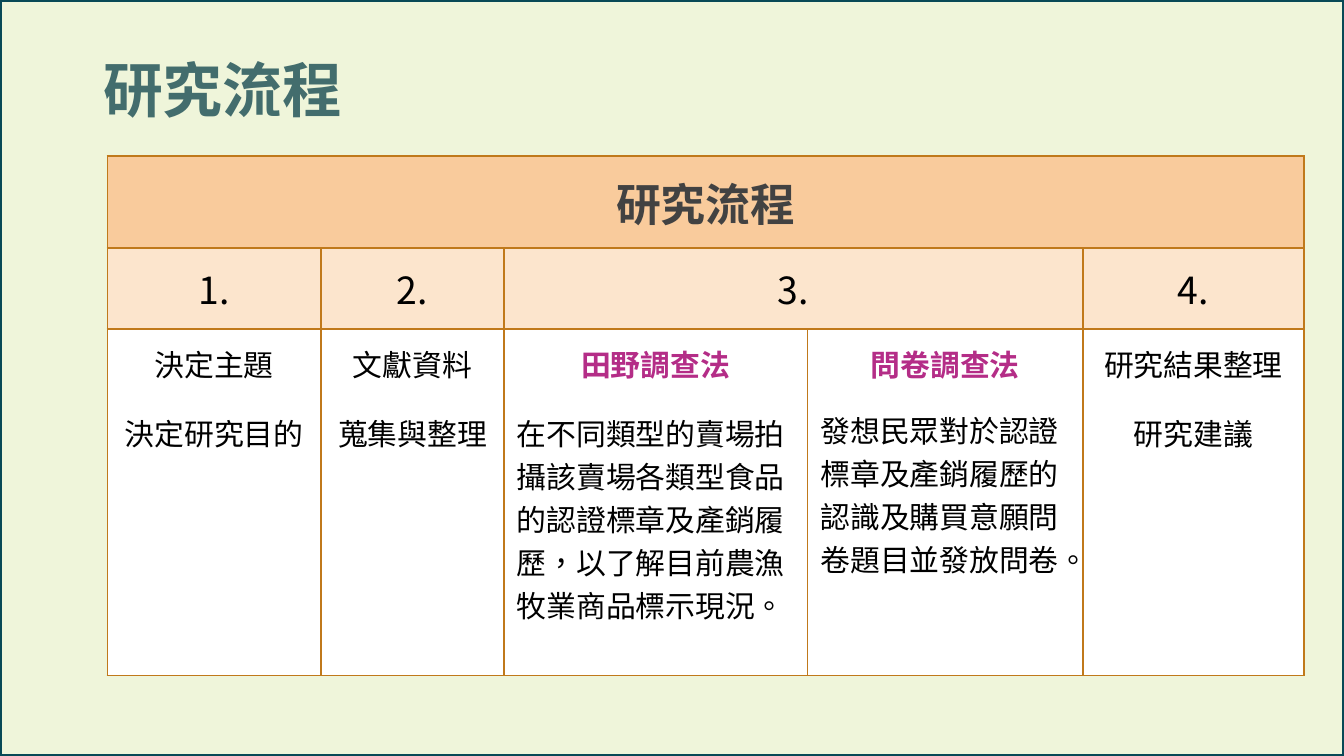
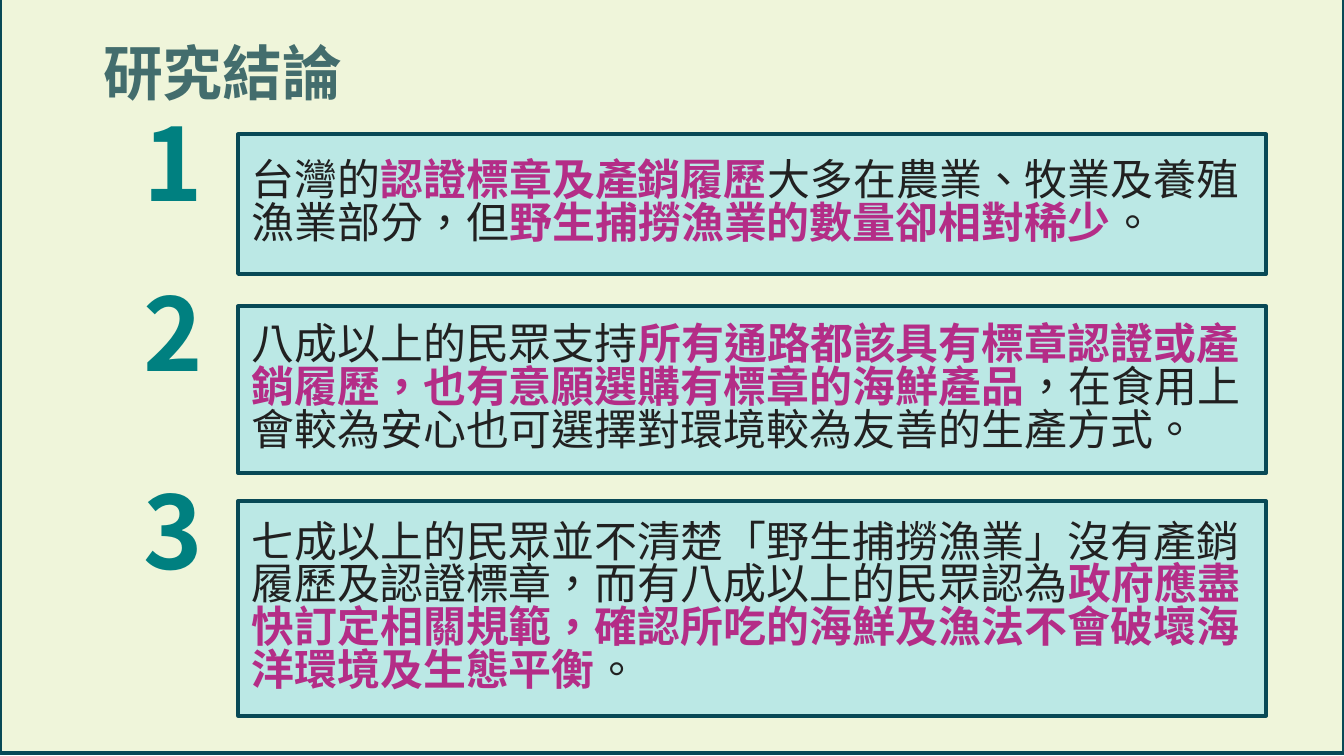
from lxml import etree
from pptx import Presentation
from pptx.dml.color import RGBColor
from pptx.enum.shapes import MSO_SHAPE
from pptx.enum.text import MSO_ANCHOR, PP_ALIGN
from pptx.oxml.ns import qn
from pptx.util import Cm, Pt

RECTANGLE = MSO_SHAPE.RECTANGLE
LEFT, CENTER = PP_ALIGN.LEFT, PP_ALIGN.CENTER
TOP, MIDDLE = MSO_ANCHOR.TOP, MSO_ANCHOR.MIDDLE

FONT = "Noto Sans CJK SC"
WIDTH, HEIGHT = 25.4, 14.29
INSET, SLIM = 0.25, 0.13
CREAM, NAVY, AQUA = "EFF5DA", "084956", "BBE8E5"
ORANGE, PEACH, WHITE, BORDER = "F9CB9C", "FCE5CD", "FFFFFF", "C0791B"
BLACK, INK, GREY = "000000", "212121", "424242"
TITLE, TEAL, ACCENT = "436D6D", "008080", "B42D87"

HEADING = "研究流程"
COLUMN_WIDTHS = [4.04, 3.45, 5.74, 5.21, 4.17]
ROW_HEIGHTS = [1.74, 1.53, 6.55]
STEP_NUMBERS = {0: "1.", 1: "2.", 2: "3.", 4: "4."}
STEPS = [
    ["決定主題", "決定研究目的"],
    ["文獻資料", "蒐集與整理"],
    ["*田野調查法*", "在不同類型的賣場拍攝該賣場各類型食品的認證標章及產銷履歷，以了解目前農漁牧業商品標示現況。"],
    ["*問卷調查法*", "發想民眾對於認證標章及產銷履歷的認識及購買意願問卷題目並發放問卷。"],
    ["研究結果整理", "研究建議"],
]
SURVEY_COLUMNS = (2, 3)

CONCLUSIONS = [
    (2.08, 2.54, 2.64,
     "台灣的*認證標章及產銷履歷*大多在農業、牧業及養殖漁業部分，但*野生捕撈漁業的數量卻相對稀少*。"),
    (5.28, 5.79, 3.15,
     "八成以上的民眾支持*所有通路都該具有標章認證或產銷履歷，也有意願選購有標章的海鮮產品*，在食用上會較為安心也可選擇對環境較為友善的生產方式。"),
    (9.02, 9.47, 4.06,
     "七成以上的民眾並不清楚「野生捕撈漁業」沒有產銷履歷及認證標章，而有八成以上的民眾認為*政府應盡快訂定相關規範，確認所吃的海鮮及漁法不會破壞海洋環境及生態平衡*。"),
]


def color(value):
    return RGBColor.from_string(value)


def apply(target, values):
    for name, value in values.items():
        setattr(target, name, value)


class Deck:
    def __init__(self):
        self.presentation = Presentation()
        apply(self.presentation, {"slide_width": Cm(WIDTH), "slide_height": Cm(HEIGHT)})
        self.slide = None

    def new_slide(self, background_top=0):
        self.slide = self.presentation.slides.add_slide(self.presentation.slide_layouts[6])
        self.panel(0, background_top, WIDTH, HEIGHT, CREAM)

    def paragraph(self, paragraph, text, size, ink, bold=False, **layout):
        apply(paragraph, layout)
        for index, part in enumerate(text.split("*")):
            if not part:
                continue
            emphasis = index % 2 == 1
            run = paragraph.add_run()
            run.text = part
            apply(run.font, {"size": Pt(size), "bold": bold or emphasis, "name": FONT})
            run.font.color.rgb = color(ACCENT if emphasis else ink)
            properties = run.font._element
            properties.set("lang", "zh-TW")
            etree.SubElement(properties, qn("a:ea"), typeface=FONT)

    def frame(self, frame, margin, anchor=TOP):
        apply(frame, {
            "word_wrap": True, "vertical_anchor": anchor,
            "margin_left": Cm(INSET), "margin_right": Cm(INSET),
            "margin_top": Cm(margin), "margin_bottom": Cm(margin),
        })

    def text(self, left, top, width, height, text, size, ink, margin, spacing):
        box = self.slide.shapes.add_textbox(Cm(left), Cm(top), Cm(width), Cm(height))
        self.frame(box.text_frame, margin)
        self.paragraph(box.text_frame.paragraphs[0], text, size, ink, True, line_spacing=spacing)

    def title(self, text, top, width, height):
        self.text(1.7, top, width, height, text, 32, TITLE, INSET, 0.9)

    def panel(self, left, top, width, height, fill, text=""):
        panel = self.slide.shapes.add_shape(RECTANGLE, Cm(left), Cm(top), Cm(width), Cm(height))
        panel.shadow.inherit = False
        panel.fill.solid()
        panel.fill.fore_color.rgb = color(fill)
        panel.line.color.rgb = color(NAVY)
        panel.line.width = Pt(2)
        if text:
            self.frame(panel.text_frame, SLIM, MIDDLE)
            self.paragraph(panel.text_frame.paragraphs[0], text, 23, INK,
                           alignment=LEFT, line_spacing=0.83)

    def table(self, left, top, widths, heights):
        table = self.slide.shapes.add_table(
            len(heights), len(widths), Cm(left), Cm(top), Cm(sum(widths)), Cm(sum(heights))).table
        apply(table, {"first_row": False, "horz_banding": False})
        for column, width in zip(table.columns, widths):
            column.width = Cm(width)
        for row, height in zip(table.rows, heights):
            row.height = Cm(height)
        return table

    def cell(self, cell, fill):
        apply(cell, {f"margin_{side}": Cm(INSET) for side in ("left", "right", "top", "bottom")})
        cell.fill.solid()
        cell.fill.fore_color.rgb = color(fill)
        for index, edge in enumerate(("lnL", "lnR", "lnT", "lnB")):
            line = etree.Element(qn(f"a:{edge}"), w=str(Pt(1)))
            solid = etree.SubElement(line, qn("a:solidFill"))
            etree.SubElement(solid, qn("a:srgbClr"), val=BORDER)
            cell._tc.get_or_add_tcPr().insert(index, line)


def process_slide(deck):
    deck.new_slide()
    table = deck.table(2.03, 2.95, COLUMN_WIDTHS, ROW_HEIGHTS)
    for row, fill in enumerate((ORANGE, PEACH, WHITE)):
        for column in range(len(COLUMN_WIDTHS)):
            deck.cell(table.cell(row, column), fill)
    table.cell(0, 0).merge(table.cell(0, 4))
    table.cell(1, 2).merge(table.cell(1, 3))

    header = table.cell(0, 0).text_frame.paragraphs[0]
    deck.paragraph(header, HEADING, 24, GREY, True, alignment=CENTER)
    for column, number in STEP_NUMBERS.items():
        paragraph = table.cell(1, column).text_frame.paragraphs[0]
        deck.paragraph(paragraph, number, 20, BLACK, alignment=CENTER)
    for column, (name, detail) in enumerate(STEPS):
        frame = table.cell(2, column).text_frame
        deck.paragraph(frame.paragraphs[0], name, 16, BLACK,
                       alignment=CENTER, space_before=Pt(14))
        deck.paragraph(frame.add_paragraph(), detail, 16, BLACK,
                       alignment=LEFT if column in SURVEY_COLUMNS else CENTER,
                       space_before=Pt(12 if column == 3 else 14),
                       space_after=Pt(12 if column == 3 else 0))
    deck.title(HEADING, 0.91, 19.53, 2.77)


def conclusion_slide(deck):
    deck.new_slide(-0.05)
    deck.title("研究結論", 0.58, 6.02, 1.4)
    for number, (number_top, top, height, text) in enumerate(CONCLUSIONS, 1):
        deck.text(2.47, number_top, 1.73, 3.07, str(number), 54, TEAL, SLIM, 0.88)
        deck.panel(4.5, top, 19.43, height, AQUA, text)


def main():
    deck = Deck()
    process_slide(deck)
    conclusion_slide(deck)
    deck.presentation.save("out.pptx")


if __name__ == "__main__":
    main()
